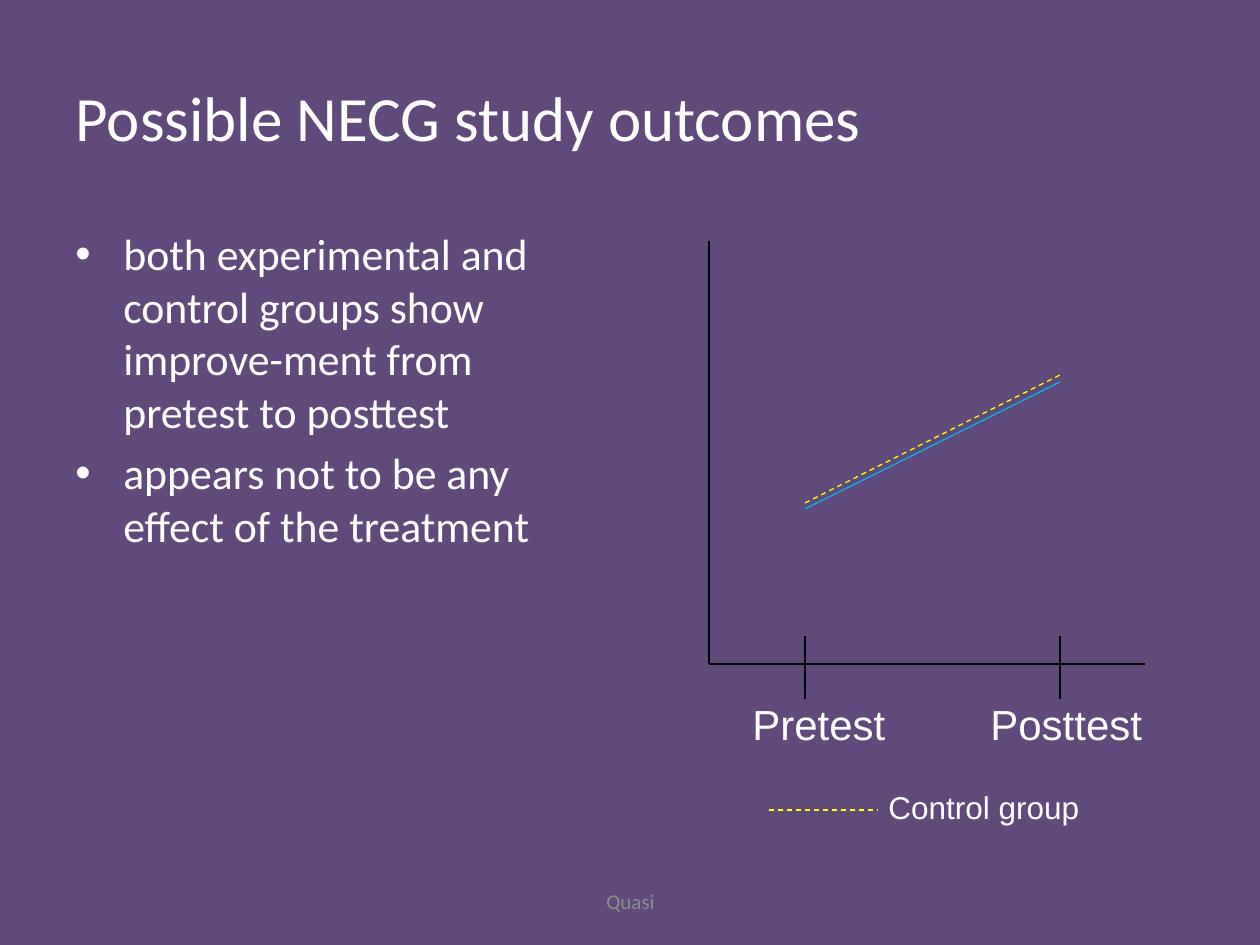
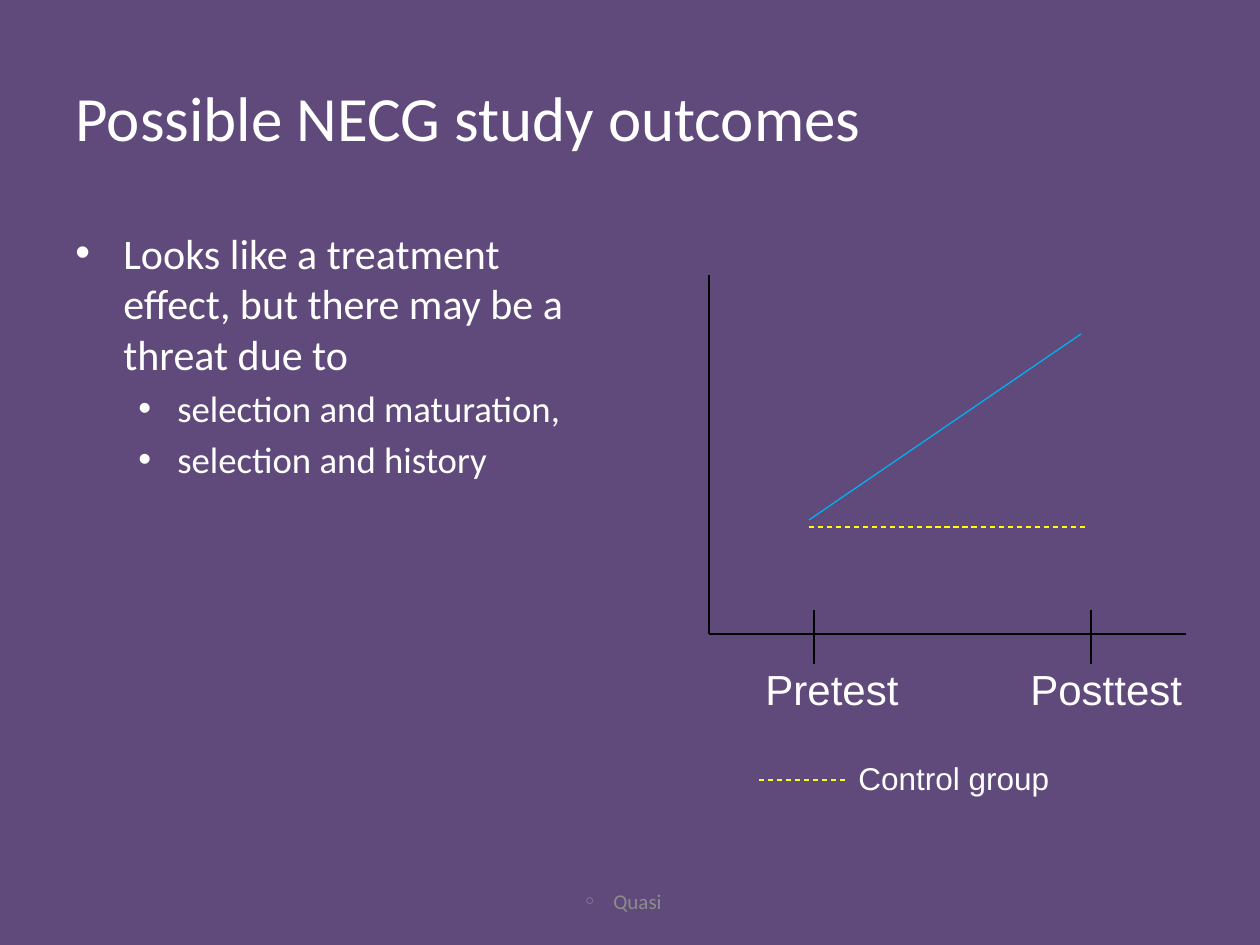
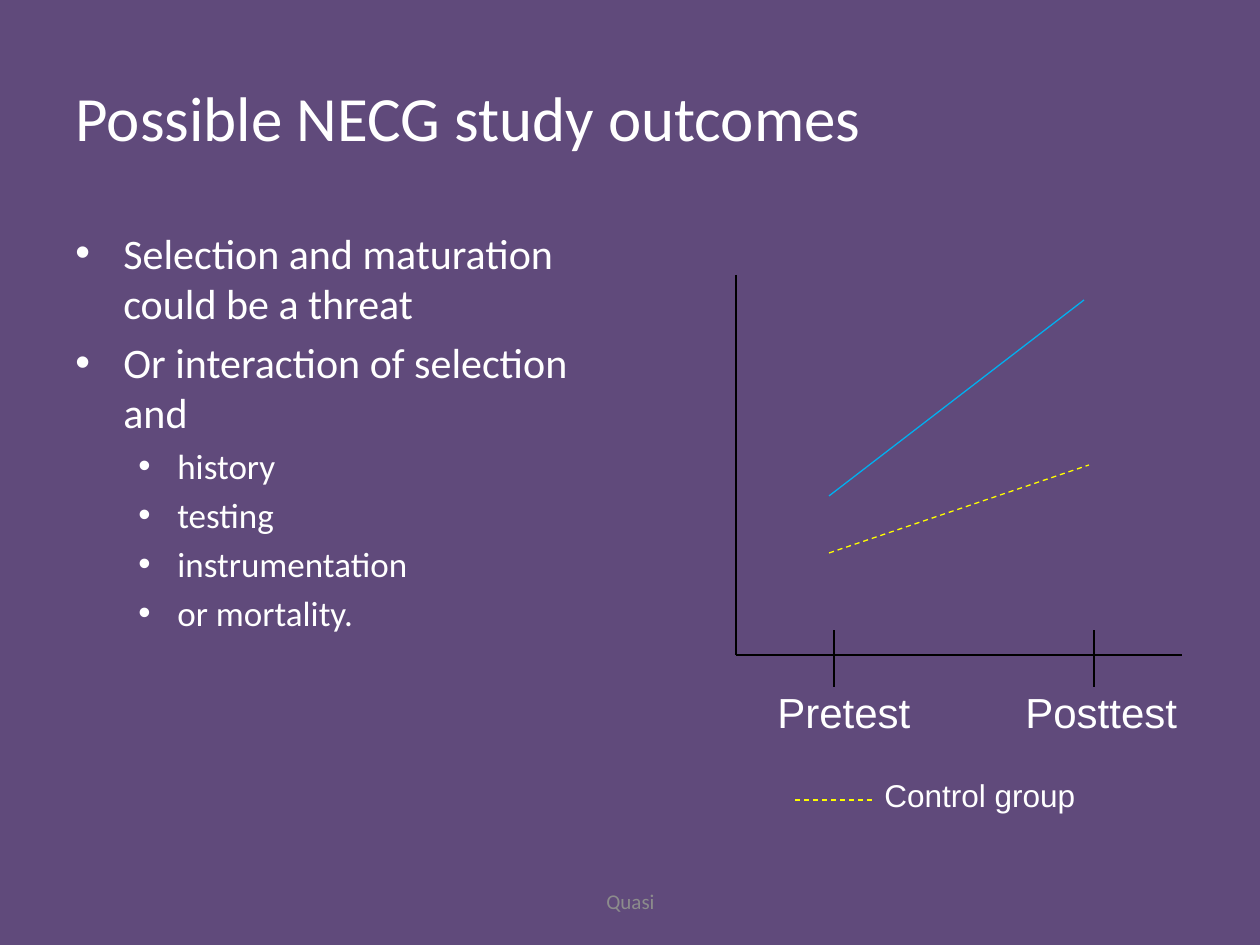
from dataclasses import dataclass

from lxml import etree
from pptx import Presentation
from pptx import util as u
from pptx.dml.color import RGBColor
from pptx.enum import dml, shapes, text
from pptx.oxml.ns import qn

SCALE = 914400 / 126
BACK, WHITE, BLACK, GREY = "604A7B", "FFFFFF", "000000", "8C8C8C"
CONTROL, TREATED = "FFFF00", "00B0F0"
BODY, LABEL = "Calibri", "Arial"
TITLE = "Possible NECG study outcomes"
INDENTS = [(48, -48), (102, -39)]


@dataclass
class Graph:
    """Places of the parts of one outcome graph, in px."""
    left: int
    top: int
    right: int
    base: int
    ticks: tuple
    span: tuple
    labels: tuple
    control: tuple
    treated: tuple
    key: tuple


def px(n):
    """Turn px into EMU."""
    return u.Emu(round(n * SCALE))


def color(code):
    """Turn a hex string into a colour."""
    return RGBColor.from_string(code)


def style(par, size, font, code):
    """Format every run of a paragraph."""
    for run in par.runs:
        run.font.size = u.Pt(size)
        run.font.name = font
        run.font.color.rgb = color(code)


def bullet(par, mark, indent, tint=None, share=None):
    """Give a paragraph a bullet and a hanging indent."""
    props = par._p.get_or_add_pPr()
    props.set("marL", str(px(indent[0])))
    props.set("indent", str(px(indent[1])))
    if tint:
        clr = etree.SubElement(props, qn("a:buClr"))
        etree.SubElement(clr, qn("a:srgbClr"), val=tint)
    if share:
        etree.SubElement(props, qn("a:buSzPct"), val=str(share * 1000))
    etree.SubElement(props, qn("a:buFont"), typeface=LABEL)
    etree.SubElement(props, qn("a:buChar"), char=mark)


def box(items, place, words, size, font, code=WHITE, wrap=True):
    """Add a text box and return its frame."""
    frame = items.add_textbox(*map(px, place)).text_frame
    frame.word_wrap = wrap
    frame.text = words
    for par in frame.paragraphs:
        style(par, size, font, code)
    return frame


def line(items, ends, code=BLACK, dash=False):
    """Add a thin straight line."""
    rule = items.add_connector(shapes.MSO_CONNECTOR.STRAIGHT, *map(px, ends))
    rule.line.color.rgb = color(code)
    rule.line.width = u.Pt(0.75)
    if dash:
        rule.line.dash_style = dml.MSO_LINE.DASH
    etree.SubElement(rule._element.spPr, qn("a:effectLst"))


def title(slide):
    """Fill and format the title placeholder."""
    head = slide.shapes.title
    head.left, head.top, head.width, head.height = map(px, (63, 38, 1134, 157))
    frame = head.text_frame
    frame.text = TITLE
    frame.vertical_anchor = text.MSO_ANCHOR.MIDDLE
    frame.paragraphs[0].alignment = text.PP_ALIGN.LEFT
    style(frame.paragraphs[0], 36, BODY, WHITE)


def points(slide, rows, sizes):
    """Add the bulleted text, given as level and words."""
    words = "\n".join(row[1] for row in rows)
    frame = box(slide.shapes, (63, 221, 557, 624), words, sizes[0], BODY)
    for par, (level, _) in zip(frame.paragraphs, rows):
        par.level = level
        par.space_before = u.Pt(sizes[level] * 0.2)
        style(par, sizes[level], BODY, WHITE)
        bullet(par, "•", INDENTS[level])


def footer(slide, marked):
    """Add the footer, with a ring before it if marked."""
    frame = box(slide.shapes, (431, 876, 399, 50), "Quasi", 12, BODY, GREY)
    frame.vertical_anchor = text.MSO_ANCHOR.MIDDLE
    par = frame.paragraphs[0]
    par.alignment = text.PP_ALIGN.CENTER
    if marked:
        bullet(par, "○", (14, -28), GREY, 70)


def graph(slide, g):
    """Draw axes, ticks, labels, both group lines and the key."""
    items = slide.shapes.add_group_shape().shapes
    line(items, (g.left, g.top, g.left, g.base))
    line(items, (g.right, g.base, g.left, g.base))
    for x in g.ticks:
        line(items, (x, g.span[0], x, g.span[1]))
    for word, (x, wide) in zip(("Pretest", "Posttest"), g.labels):
        box(items, (x, g.span[1] - 7, wide, 63), word, 24, LABEL)
    line(items, g.control, CONTROL, True)
    line(items, g.treated, TREATED)
    start, end, y, drop = g.key
    box(items, (end - 2, y - drop, 217, 50), "Control group", 18, LABEL, wrap=False)
    line(items, (start, y, end, y), CONTROL, True)


PAGES = [
    ([(0, "both experimental and control groups show improve-ment from pretest to posttest"),
      (0, "appears not to be any effect of the treatment")],
     (25, 21), False,
     Graph(709, 241, 1145, 664, (805, 1060), (636, 699), ((740, 169), (978, 208)),
           (805, 503, 1060, 375), (805, 509, 1060, 382), (769, 878, 810, 28))),
    ([(0, "Looks like a treatment effect, but there may be a threat due to"),
      (1, "selection and maturation,"),
      (1, "selection and history")],
     (24, 21), True,
     Graph(709, 275, 1186, 634, (814, 1091), (610, 664), ((753, 159), (1018, 188)),
           (809, 527, 1086, 527), (809, 520, 1081, 334), (759, 848, 780, 27))),
    ([(0, "Selection and maturation could be a threat"),
      (0, "Or interaction of selection and"),
      (1, "history"),
      (1, "testing"),
      (1, "instrumentation"),
      (1, "or mortality.")],
     (24, 20), False,
     Graph(736, 275, 1182, 655, (834, 1094), (630, 687), ((765, 180), (1013, 192)),
           (829, 553, 1089, 465), (829, 496, 1084, 300), (795, 874, 800, 30))),
]


def main():
    """Build the deck."""
    deck = Presentation()
    deck.slide_width, deck.slide_height = px(1260), px(945)
    fill = deck.slide_master.background.fill
    fill.solid()
    fill.fore_color.rgb = color(BACK)
    for rows, sizes, marked, plot in PAGES:
        slide = deck.slides.add_slide(deck.slide_layouts[5])
        title(slide)
        points(slide, rows, sizes)
        footer(slide, marked)
        graph(slide, plot)
    deck.save("out.pptx")


if __name__ == "__main__":
    main()
